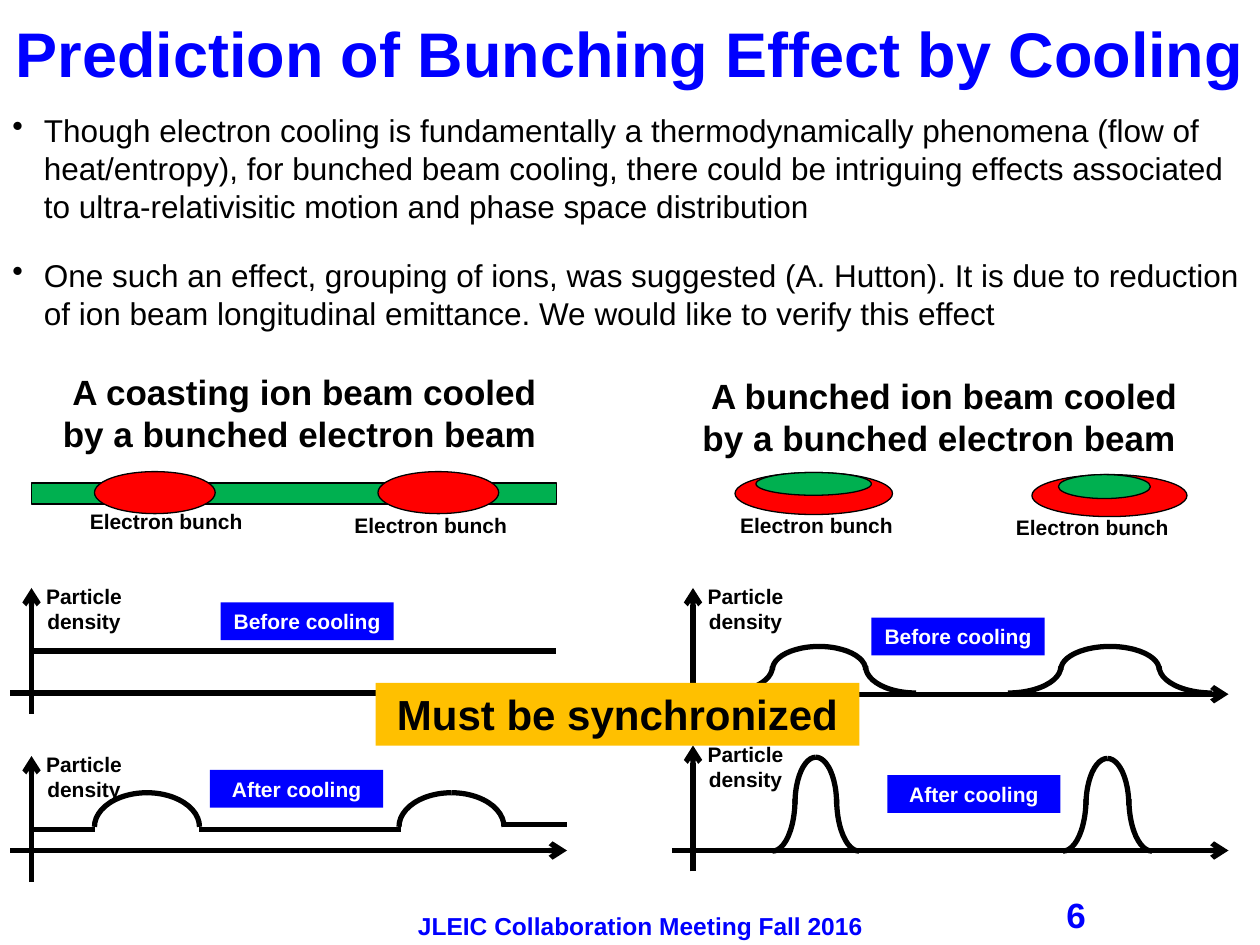
"""Build the slide on the bunching effect predicted for electron cooling."""
from lxml.etree import SubElement
from pptx import Presentation
from pptx.dml.color import RGBColor
from pptx.enum.shapes import MSO_CONNECTOR, MSO_SHAPE
from pptx.enum.text import MSO_ANCHOR, MSO_AUTO_SIZE, PP_ALIGN
from pptx.oxml.ns import qn
from pptx.util import Pt

COLORS = {
    "black": "000000",
    "white": "FFFFFF",
    "blue": "0000FF",
    "electron": "FF0000",
    "ion": "00B050",
    "highlight": "FFC000",
}

presentation = Presentation()
presentation.slide_width = Pt(720)
presentation.slide_height = Pt(540)
slide = presentation.slides.add_slide(presentation.slide_layouts[5])


def write_text(shape, *texts, size=12, color="black", bold=True, align=PP_ALIGN.CENTER,
               anchor=MSO_ANCHOR.TOP, bullet=None, after=0, grow=False):
    frame = shape.text_frame
    frame.word_wrap = True
    frame.auto_size = MSO_AUTO_SIZE.SHAPE_TO_FIT_TEXT if grow else MSO_AUTO_SIZE.NONE
    frame.vertical_anchor = anchor
    for index, text in enumerate(texts):
        paragraph = frame.add_paragraph() if index else frame.paragraphs[0]
        paragraph.alignment = align
        paragraph.space_after = Pt(after)
        if bullet:
            properties = paragraph._p.get_or_add_pPr()
            properties.set("marL", str(Pt(18)))
            properties.set("indent", str(Pt(-18)))
            SubElement(properties, qn("a:buChar")).set("char", bullet)
        run = paragraph.add_run()
        run.text = text
        run.font.name = "Arial"
        run.font.size = Pt(size)
        run.font.bold = bold
        run.font.color.rgb = RGBColor.from_string(COLORS[color])


def draw_shape(kind, box, fill=None, line_width=0):
    shape = slide.shapes.add_shape(kind, *[Pt(length) for length in box])
    shape.shadow.inherit = False
    if fill:
        shape.fill.solid()
        shape.fill.fore_color.rgb = RGBColor.from_string(COLORS[fill])
    else:
        shape.fill.background()
    if line_width:
        shape.line.color.rgb = RGBColor.from_string(COLORS["black"])
        shape.line.width = Pt(line_width)
    else:
        shape.line.fill.background()
    return shape


title = slide.shapes.title
title.left, title.top, title.width, title.height = Pt(0), Pt(0), Pt(720), Pt(60)
write_text(title, "Prediction of Bunching Effect by Cooling", size=36, color="blue",
           anchor=MSO_ANCHOR.MIDDLE)

body = slide.shapes.add_textbox(Pt(0), Pt(60), Pt(720), Pt(132))
write_text(
    body,
    "Though electron cooling is fundamentally a thermodynamically phenomena (flow of "
    "heat/entropy), for bunched beam cooling, there could be intriguing effects associated "
    "to ultra-relativisitic motion and phase space distribution",
    "One such an effect, grouping of ions, was suggested (A. Hutton). It is due to reduction "
    "of ion beam longitudinal emittance. We would like to verify this effect",
    size=18, bold=False, align=PP_ALIGN.LEFT, bullet="•", after=18)

draw_shape(MSO_SHAPE.RECTANGLE, (18, 276, 300, 12), "ion", 0.75)
beam_ellipses = [
    ((54, 269.5, 69, 24), "electron"),
    ((216, 269.5, 69, 24), "electron"),
    ((420, 270, 90, 24), "electron"),
    ((589.7, 271.2, 88.6, 24), "electron"),
    ((432, 270, 66, 13), "ion"),
    ((604.8, 271.2, 52.6, 13.7), "ion"),
]
for box, fill in beam_ellipses:
    draw_shape(MSO_SHAPE.OVAL, box, fill, 0.75)

text_boxes = [
    ((24, 208, 300, 55.4), "A coasting ion beam cooled by a bunched electron beam ", 20),
    ((389.5, 210.2, 300, 55.4), "A bunched ion beam cooled by a bunched electron beam ", 20),
]
for left, top in [(30.2, 287.3), (181.4, 289.4), (401.8, 289.4), (559.4, 290.2)]:
    text_boxes.append(((left, top, 129.6, 21.6), "Electron bunch", 12))

lines = [
    ((18, 372, 318, 372), False),
    ((18, 474, 54, 474), False),
    ((114, 474, 229, 474), False),
    ((288, 471, 324, 471), False),
]
density_plots = [
    (18, 408, 396, (126, 344.2), "Before cooling"),
    (18, 504, 486, (120, 440), "After cooling"),
    (396, 408, 396.7, (498, 353), "Before cooling"),
    (396, 498, 486, (507, 443), "After cooling"),
]
for axis_x, bottom, axis_y, label_position, label in density_plots:
    lines.append(((axis_x, bottom, axis_x, bottom - 72), True))
    lines.append(((axis_x - 12, axis_y, axis_x + 306, axis_y), True))
    text_boxes.append(((axis_x, bottom - 78, 60, 36), "Particle density", 12))
    label_shape = draw_shape(MSO_SHAPE.RECTANGLE, (*label_position, 99, 21.6), "blue")
    write_text(label_shape, label, color="white", grow=True)

for ends, arrow in lines:
    connector = slide.shapes.add_connector(MSO_CONNECTOR.STRAIGHT, *[Pt(end) for end in ends])
    connector.line.color.rgb = RGBColor.from_string(COLORS["black"])
    connector.line.width = Pt(3)
    if arrow:
        SubElement(connector.line._get_or_add_ln(), qn("a:tailEnd")).set("type", "arrow")
    SubElement(connector._element.spPr, qn("a:effectLst"))

domes = [(54, 453, 60, 39), (228, 453, 60, 39)]
bells = [
    ((441.4, 369.4, 53.3, 26.6), 57.6, 30.2, 396),
    ((606.2, 369.4, 56.2, 26.6), 60.5, 30.2, 396),
    ((454.3, 432.7, 23.8, 53.3), 25.9, 59.8, 486.4),
    ((620.6, 433.4, 24.5, 53.3), 26.6, 59.8, 486.4),
]
arcs = []
for dome, tail_width, tail_height, bottom in bells:
    domes.append(dome)
    left, top, width, height = dome
    tail_top = bottom - tail_height / 2 - tail_width / 2
    for center, rotation, flip in [(left - tail_width / 2, 90, False),
                                   (left + width + tail_width / 2, 270, True)]:
        box = (center - tail_height / 2, tail_top, tail_height, tail_width)
        arcs.append((box, rotation, flip))
for dome in domes:
    arcs += [(dome, 0, False), (dome, 0, True)]
for box, rotation, flip in arcs:
    arc = draw_shape(MSO_SHAPE.ARC, box, line_width=3)
    arc.rotation = rotation
    if flip:
        arc._element.spPr.get_or_add_xfrm().set("flipH", "1")

for box, text, size in text_boxes:
    text_box = slide.shapes.add_textbox(*[Pt(length) for length in box])
    write_text(text_box, text, size=size, grow=True)

banner = draw_shape(MSO_SHAPE.RECTANGLE, (214.6, 390.2, 276.5, 36), "highlight")
write_text(banner, "Must be synchronized", size=24, grow=True)

footer = slide.shapes.add_textbox(Pt(210), Pt(517), Pt(312), Pt(29))
write_text(footer, "JLEIC Collaboration Meeting Fall 2016", size=14, color="blue")
page_number = slide.shapes.add_textbox(Pt(588), Pt(507), Pt(54), Pt(27))
write_text(page_number, "6", size=20, color="blue")

presentation.save("out.pptx")
